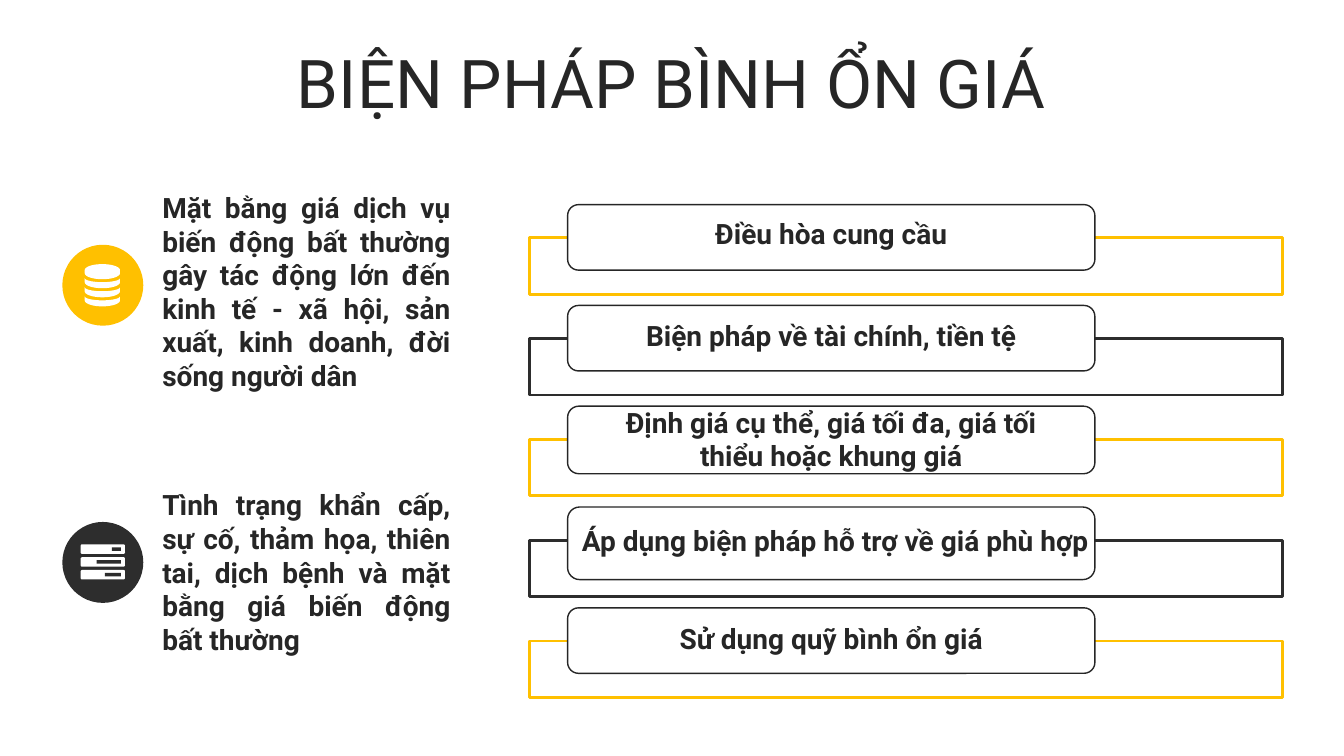
from math import cos, pi, sin

from lxml import etree
from pptx import Presentation
from pptx.dml.color import RGBColor
from pptx.enum.shapes import MSO_SHAPE
from pptx.enum.text import MSO_ANCHOR, PP_ALIGN
from pptx.oxml.ns import qn
from pptx.util import Inches, Pt

AMBER = RGBColor(0xFF, 0xC0, 0x00)
DARK = RGBColor(0x2D, 0x2D, 0x2D)
INK = RGBColor(0x26, 0x26, 0x26)
WHITE = RGBColor(0xFF, 0xFF, 0xFF)
FONT = "Roboto"

prs = Presentation()
prs.slide_width, prs.slide_height = Inches(13.33), Inches(7.5)
slide = prs.slides.add_slide(prs.slide_layouts[5])


def add_box(preset, left, top, width, height, fill, line=None, weight=1):
    box = slide.shapes.add_shape(
        preset, Inches(left), Inches(top), Inches(width), Inches(height))
    box.shadow.inherit = False
    box.fill.solid()
    box.fill.fore_color.rgb = fill
    if line is None:
        box.line.fill.background()
    else:
        box.line.color.rgb = line
        box.line.width = Pt(weight)
    return box


def write(holder, text, size, align, bold):
    frame = holder.text_frame
    frame.word_wrap = True
    frame.margin_left = frame.margin_right = 0
    frame.margin_top = frame.margin_bottom = 0
    paragraph = frame.paragraphs[0]
    paragraph.alignment = align
    run = paragraph.add_run()
    run.text = text
    run.font.name, run.font.size, run.font.bold = FONT, Pt(size), bold
    run.font.color.rgb = INK
    return paragraph


# Title
title = slide.shapes.title
title.left, title.top = Inches(0.56), Inches(0.5)
title.width, title.height = Inches(12.2), Inches(0.72)
title.text_frame.vertical_anchor = MSO_ANCHOR.MIDDLE
write(title, "BIỆN PHÁP BÌNH ỔN GIÁ", 48, PP_ALIGN.CENTER, False).line_spacing = 0.9

# Measures: an outlined bar with a rounded card over it, one per inch
measures = [  # label, card height, label left, top, width, height
    ("Điều hòa cung cầu", 0.65, 5.91, 2.15, 4.67, 0.34),
    ("Biện pháp về tài chính, tiền tệ", 0.65, 5.91, 3.16, 4.67, 0.34),
    ("Định giá cụ thể, giá tối đa, giá tối thiểu hoặc khung giá",
     0.67, 5.91, 4.02, 4.67, 0.67),
    ("Áp dụng biện pháp hỗ trợ về giá phù hợp", 0.72, 5.71, 5.19, 5.15, 0.34),
    ("Sử dụng quỹ bình ổn giá", 0.65, 5.91, 6.17, 4.67, 0.34),
]
for row, (label, card_height, left, top, width, height) in enumerate(measures):
    bar = add_box(MSO_SHAPE.RECTANGLE, 5.25, 2.36 + row, 7.47, 0.56,
                  WHITE, (AMBER, DARK)[row % 2], 2)
    bar_color = bar.fill._xPr.find(qn("a:solidFill"))[0]
    etree.SubElement(bar_color, qn("a:alpha"), val="90000")
    add_box(MSO_SHAPE.ROUNDED_RECTANGLE, 5.63, 2.03 + row, 5.23, card_height,
            WHITE, INK)
    label_box = slide.shapes.add_textbox(
        Inches(left), Inches(top), Inches(width), Inches(height))
    write(label_box, label, 20, PP_ALIGN.CENTER, True).space_after = Pt(12)

# Conditions: a round badge and a justified text
conditions = [
    ("Mặt bằng giá dịch vụ biến động bất thường gây tác động lớn đến "
     "kinh tế - xã hội, sản xuất, kinh doanh, đời sống người dân",
     1.89, 2.02, 2.46, AMBER),
    ("Tình trạng khẩn cấp, sự cố, thảm họa, thiên tai, dịch bệnh và "
     "mặt bằng giá biến động bất thường",
     4.84, 1.68, 5.21, DARK),
]
for condition, top, height, badge_top, color in conditions:
    condition_box = slide.shapes.add_textbox(
        Inches(1.61), Inches(top), Inches(2.86), Inches(height))
    write(condition_box, condition, 20, PP_ALIGN.JUSTIFY, True).space_after = Pt(12)
    add_box(MSO_SHAPE.OVAL, 0.65, badge_top, 0.74, 0.74, color, color, 4.5)

# Coin stack: each layer lies between two half ellipses
layers = [  # upper edge, its sag, lower edge, its sag
    (2.68, -0.06, 2.71, 0.06),
    (2.76, 0.04, 2.80, 0.06),
    (2.85, 0.04, 2.89, 0.06),
    (2.94, 0.04, 2.98, 0.06),
]
angles = [pi * step / 24 for step in range(25)]
for upper, upper_sag, lower, lower_sag in layers:
    outline = [(1.015 - 0.175 * cos(a), upper + upper_sag * sin(a)) for a in angles]
    outline += [(1.015 + 0.175 * cos(a), lower + lower_sag * sin(a)) for a in angles]
    points = [(Inches(x), Inches(y)) for x, y in outline]
    builder = slide.shapes.build_freeform(*points[0])
    builder.add_line_segments(points[1:], close=True)
    coin = builder.convert_to_shape()
    coin.shadow.inherit = False
    coin.fill.solid()
    coin.fill.fore_color.rgb = WHITE
    coin.line.fill.background()

# Server stack: three units, each with a slot ending at the same right edge
for unit, slot_width in enumerate((0.09, 0.24, 0.16)):
    unit_top = 5.4 + 0.127 * unit
    add_box(MSO_SHAPE.ROUNDED_RECTANGLE, 0.8, unit_top, 0.44, 0.095, WHITE)
    add_box(MSO_SHAPE.RECTANGLE, 1.2 - slot_width, unit_top + 0.03,
            slot_width, 0.035, DARK)

prs.save("out.pptx")
